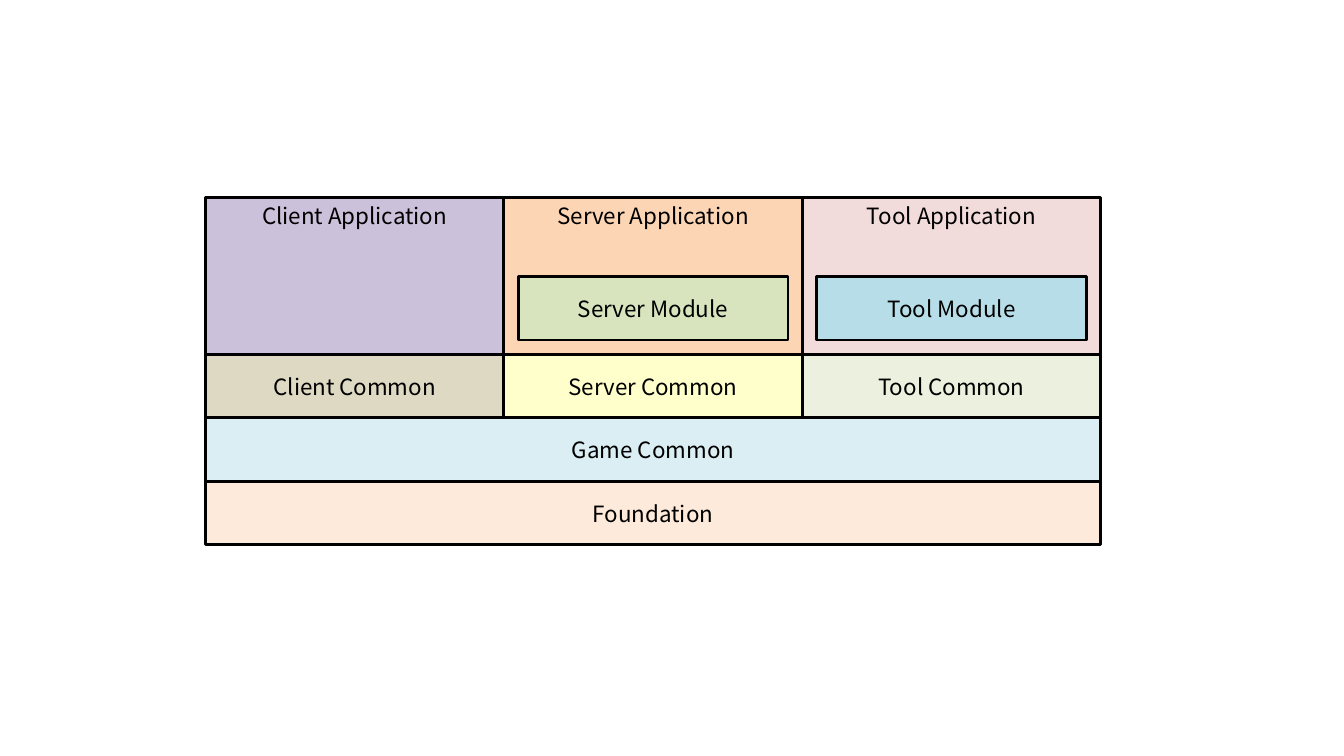
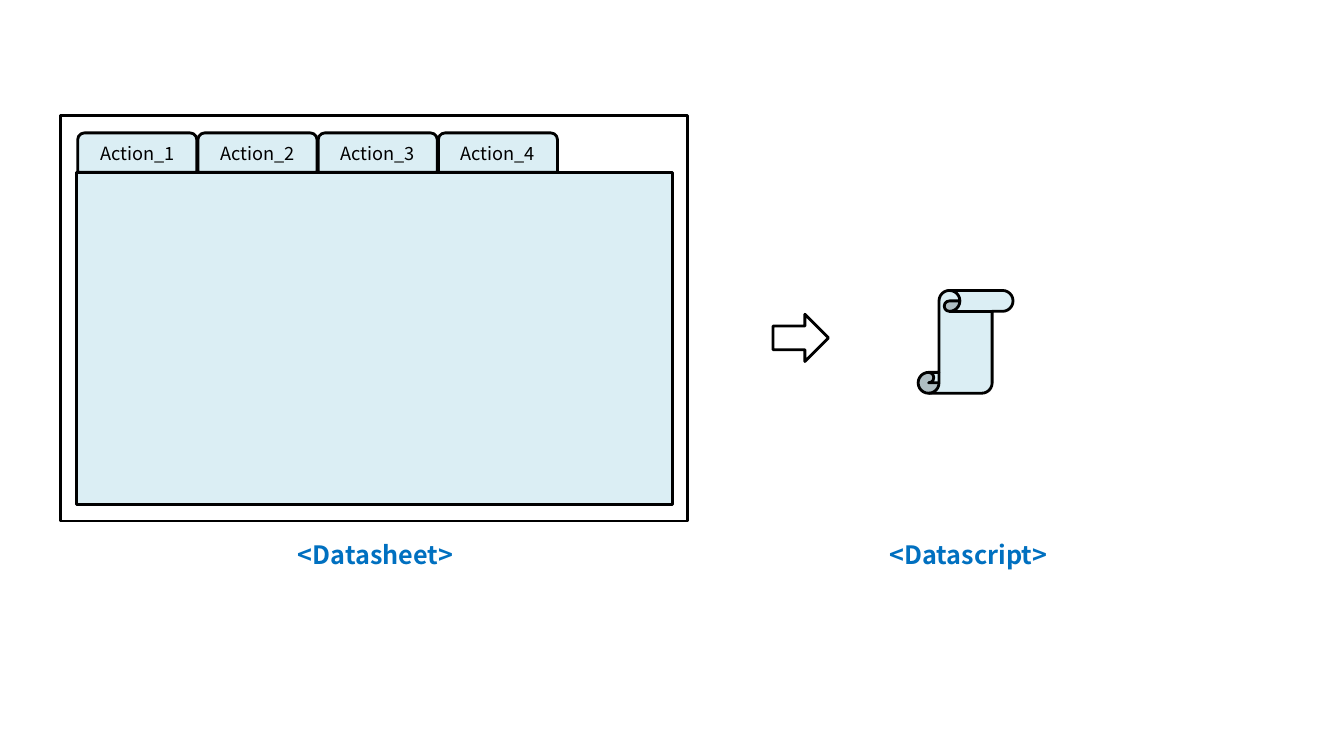
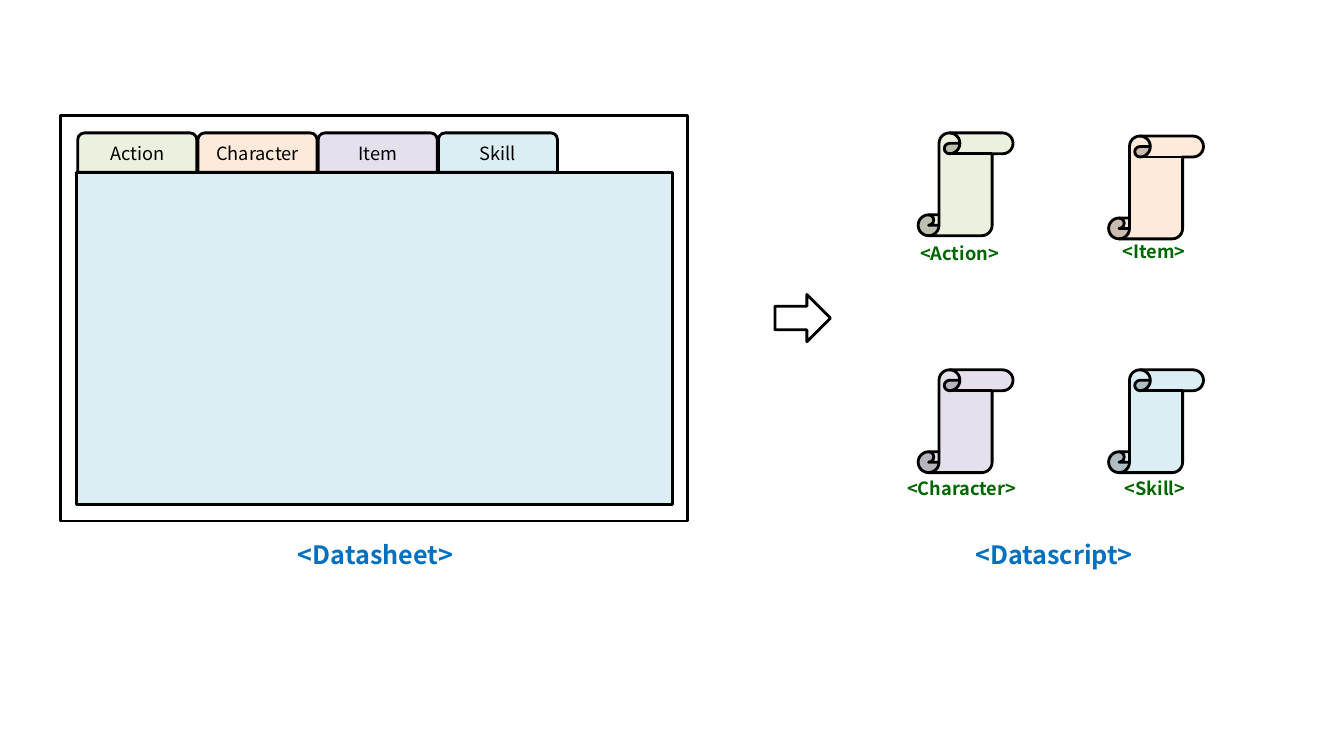
from dataclasses import dataclass
from typing import NamedTuple

from pptx import Presentation
from pptx.dml.color import RGBColor
from pptx.enum.shapes import MSO_SHAPE
from pptx.enum.text import MSO_ANCHOR, MSO_AUTO_SIZE, PP_ALIGN
from pptx.shapes.autoshape import Shape
from pptx.slide import Slide
from pptx.text.text import TextFrame
from pptx.util import Cm, Pt

RECTANGLE = MSO_SHAPE.RECTANGLE
TAB_SHAPE = MSO_SHAPE.ROUND_2_SAME_RECTANGLE
SCROLL_SHAPE = MSO_SHAPE.VERTICAL_SCROLL
ARROW_SHAPE = MSO_SHAPE.RIGHT_ARROW
TOP = MSO_ANCHOR.TOP
MIDDLE = MSO_ANCHOR.MIDDLE
LEFT = PP_ALIGN.LEFT
CENTER = PP_ALIGN.CENTER
FIT_SHAPE = MSO_AUTO_SIZE.SHAPE_TO_FIT_TEXT

FONT = "Noto Sans CJK KR"
BLACK = "000000"
BLUE = "0070C0"
DARK_GREEN = "006600"
PALE_BLUE = "DBEEF4"
PALE_GREEN = "EBF1DE"
PALE_ORANGE = "FDEADA"
PALE_PURPLE = "E6E0EC"

BLANK_LAYOUT = 6
LINE_WIDTH = 2

STACK_LEFT = 5.18
STACK_TOP = 4.98
COLUMN_WIDTH = 7.52
APPLICATION_HEIGHT = 3.95
ROW_HEIGHT = 1.6
MODULE_INSET = 0.36

TAB_LEFT = 1.96
TAB_TOP = 3.35
TAB_PITCH = 3.03
TAB_WIDTH = 3
TAB_HEIGHT = 0.99
CAPTION_TOP = 13.46
SCROLL_COLUMNS = (23.14, 27.94)


class Place(NamedTuple):
    left: float
    top: float
    width: float
    height: float


@dataclass
class Column:
    name: str
    application_color: str
    common_color: str
    module_color: str | None = None


@dataclass
class Tab:
    text: str
    color: str


@dataclass
class Scroll:
    left: float
    top: float
    color: str


@dataclass
class Caption:
    text: str
    place: Place
    size: int = 13
    color: str = DARK_GREEN


COLUMNS = (
    Column("Client", "CCC1DA", "DDD9C3"),
    Column("Server", "FCD5B5", "FFFFCC", "D7E4BD"),
    Column("Tool", "F2DCDB", PALE_GREEN, "B7DEE8"),
)
BASE_LAYERS = (("Game Common", PALE_BLUE), ("Foundation", PALE_ORANGE))

ACTION_TABS = tuple(Tab(f"Action_{number}", PALE_BLUE) for number in range(1, 5))
CATEGORY_TABS = (
    Tab("Action", PALE_GREEN),
    Tab("Character", PALE_ORANGE),
    Tab("Item", PALE_PURPLE),
    Tab("Skill", PALE_BLUE),
)

SINGLE_SCROLL = (Scroll(SCROLL_COLUMNS[0], 7.32, PALE_BLUE),)
CATEGORY_SCROLLS = (
    Scroll(SCROLL_COLUMNS[0], 3.35, PALE_GREEN),
    Scroll(SCROLL_COLUMNS[1], 3.43, PALE_ORANGE),
    Scroll(SCROLL_COLUMNS[0], 9.32, PALE_PURPLE),
    Scroll(SCROLL_COLUMNS[1], 9.32, PALE_BLUE),
)
CATEGORY_CAPTIONS = (
    Caption("<Action>", Place(22.94, 5.97, 2.62, 0.81)),
    Caption("<Item>", Place(28.04, 5.94, 2.18, 0.81)),
    Caption("<Character>", Place(22.61, 11.91, 3.28, 0.81)),
    Caption("<Skill>", Place(28.09, 11.91, 2.08, 0.81)),
)


def rgb(color: str) -> RGBColor:
    return RGBColor.from_string(color)


def write_text(frame: TextFrame, text: str, *, size: int, color: str = BLACK,
               bold: bool = False, align: PP_ALIGN = CENTER,
               anchor: MSO_ANCHOR = MIDDLE) -> None:
    frame.vertical_anchor = anchor
    para = frame.paragraphs[0]
    para.alignment = align
    span = para.add_run()
    span.text = text
    span.font.name = FONT
    span.font.size = Pt(size)
    span.font.bold = bold
    span.font.color.rgb = rgb(color)


def add_box(page: Slide, kind: MSO_SHAPE, place: Place, fill: str | None = None) -> Shape:
    box = page.shapes.add_shape(kind, *map(Cm, place))
    box.shadow.inherit = False
    if fill is None:
        box.fill.background()
    else:
        box.fill.solid()
        box.fill.fore_color.rgb = rgb(fill)
    box.line.color.rgb = rgb(BLACK)
    box.line.width = Pt(LINE_WIDTH)
    return box


def add_block(page: Slide, text: str, place: Place, fill: str,
              anchor: MSO_ANCHOR = MIDDLE) -> None:
    box = add_box(page, RECTANGLE, place, fill)
    write_text(box.text_frame, text, size=16, anchor=anchor)


def add_caption(page: Slide, caption: Caption) -> None:
    frame = page.shapes.add_textbox(*map(Cm, caption.place)).text_frame
    frame.word_wrap = False
    frame.auto_size = FIT_SHAPE
    write_text(frame, caption.text, size=caption.size, color=caption.color,
               bold=True, align=LEFT, anchor=TOP)


def add_tab(page: Slide, index: int, tab: Tab) -> None:
    place = Place(TAB_LEFT + index * TAB_PITCH, TAB_TOP, TAB_WIDTH, TAB_HEIGHT)
    box = add_box(page, TAB_SHAPE, place, tab.color)
    write_text(box.text_frame, tab.text, size=13)


def add_scroll(page: Slide, scroll: Scroll) -> None:
    place = Place(scroll.left, scroll.top, 2.39, 2.59)
    box = add_box(page, SCROLL_SHAPE, place, scroll.color)
    box.adjustments[0] = 0.22


def draw_layers(page: Slide) -> None:
    common_top = STACK_TOP + APPLICATION_HEIGHT
    stack_width = COLUMN_WIDTH * len(COLUMNS)
    for index, (text, color) in reversed(list(enumerate(BASE_LAYERS, start=1))):
        top = common_top + index * ROW_HEIGHT
        add_block(page, text, Place(STACK_LEFT, top, stack_width, ROW_HEIGHT), color)
    for index, column in enumerate(COLUMNS):
        left = STACK_LEFT + index * COLUMN_WIDTH
        add_block(page, f"{column.name} Common",
                  Place(left, common_top, COLUMN_WIDTH, ROW_HEIGHT), column.common_color)
        add_block(page, f"{column.name} Application",
                  Place(left, STACK_TOP, COLUMN_WIDTH, APPLICATION_HEIGHT),
                  column.application_color, anchor=TOP)
        if column.module_color:
            place = Place(left + MODULE_INSET, common_top - MODULE_INSET - ROW_HEIGHT,
                          COLUMN_WIDTH - 2 * MODULE_INSET, ROW_HEIGHT)
            add_block(page, f"{column.name} Module", place, column.module_color)


def draw_conversion(page: Slide, tabs: tuple[Tab, ...], scrolls: tuple[Scroll, ...],
                    arrow_left: float, arrow_top: float, script_left: float) -> None:
    add_box(page, RECTANGLE, Place(1.52, 2.92, 15.8, 10.21))
    for index, tab in enumerate(tabs):
        add_tab(page, index, tab)
    add_box(page, RECTANGLE, Place(1.93, TAB_TOP + TAB_HEIGHT, 15.01, 8.38), PALE_BLUE)
    for scroll in scrolls:
        add_scroll(page, scroll)
    add_box(page, ARROW_SHAPE, Place(arrow_left, arrow_top, 1.4, 1.19))
    for text, left in (("<Datasheet>", 7.26), ("<Datascript>", script_left)):
        add_caption(page, Caption(text, Place(left, CAPTION_TOP, 4.52, 1.02), 18, BLUE))


def main() -> None:
    deck = Presentation()
    deck.slide_width = Cm(33.87)
    deck.slide_height = Cm(19.05)
    layout = deck.slide_layouts[BLANK_LAYOUT]

    draw_layers(deck.slides.add_slide(layout))

    draw_conversion(deck.slides.add_slide(layout), ACTION_TABS, SINGLE_SCROLL,
                    arrow_left=19.48, arrow_top=7.92, script_left=22.17)

    category_page = deck.slides.add_slide(layout)
    draw_conversion(category_page, CATEGORY_TABS, CATEGORY_SCROLLS,
                    arrow_left=19.53, arrow_top=7.42, script_left=24.33)
    for caption in CATEGORY_CAPTIONS:
        add_caption(category_page, caption)

    deck.save("out.pptx")


if __name__ == "__main__":
    main()
